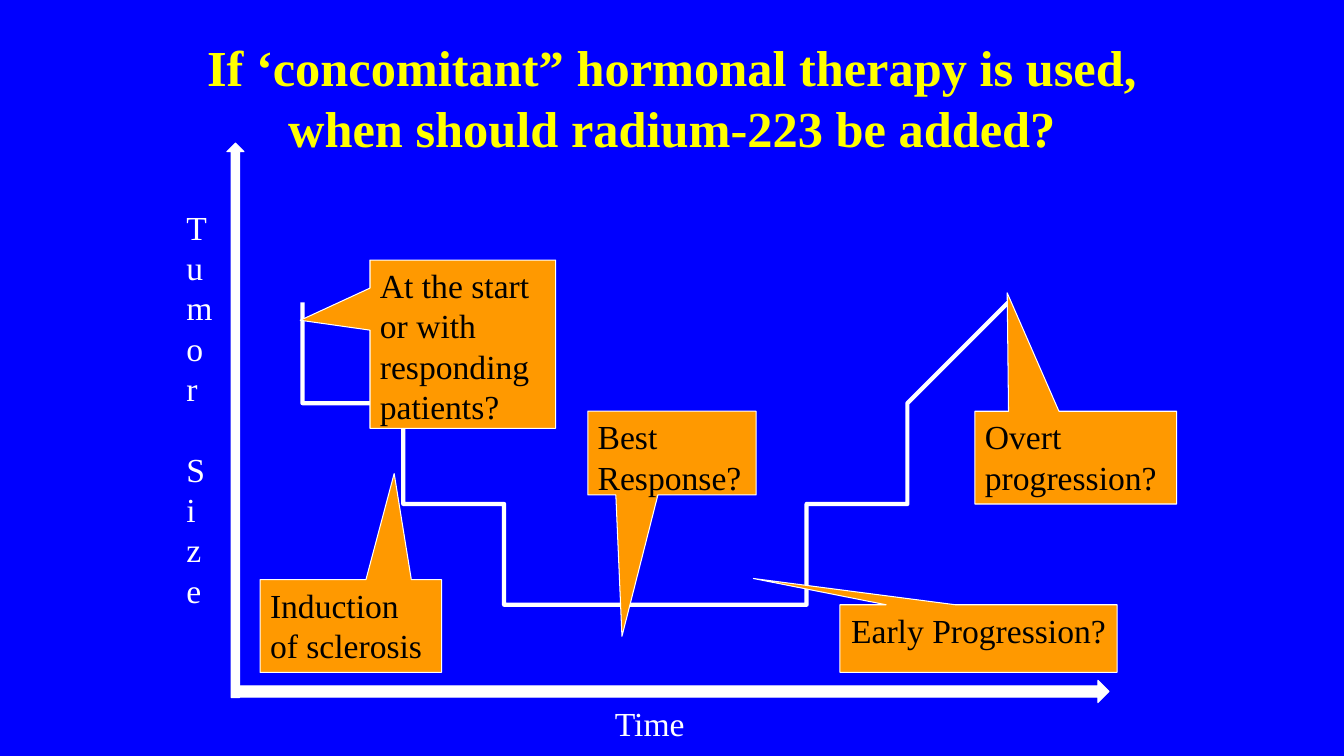
from pptx import Presentation
from pptx.dml.color import RGBColor
from pptx.enum.shapes import MSO_SHAPE as SHAPE
from pptx.enum.text import MSO_ANCHOR as ANCHOR, MSO_AUTO_SIZE as AUTO_SIZE, PP_ALIGN as ALIGN
from pptx.util import Inches, Pt

COLORS = {"background": "0000FF", "title": "FFFF00", "callout": "FF9900",
          "white": "FFFFFF", "black": "000000"}


def color(name):
    return RGBColor.from_string(COLORS[name])


def write(shape, text, size=24, ink="white", bold=False, align=ALIGN.LEFT,
          anchor=ANCHOR.TOP, gap=0):
    """Fill a shape with text, one paragraph per line, gap points apart."""
    frame = shape.text_frame
    frame.word_wrap = True
    frame.auto_size = AUTO_SIZE.NONE
    frame.vertical_anchor = anchor
    frame.text = text
    for index, paragraph in enumerate(frame.paragraphs):
        paragraph.alignment = align
        paragraph.space_before = Pt(gap if index else 0)
        font = paragraph.runs[0].font
        font.name, font.size, font.bold = "Times New Roman", Pt(size), bold
        font.color.rgb = color(ink)


prs = Presentation()
prs.slide_width, prs.slide_height = Inches(13.33), Inches(7.5)
slide = prs.slides.add_slide(prs.slide_layouts[5])
slide.background.fill.solid()
slide.background.fill.fore_color.rgb = color("background")
shapes = slide.shapes

# Title
title = shapes.title
title.left, title.top = Inches(1.75), Inches(0.17)
title.width, title.height = Inches(9.83), Inches(1.58)
write(title, "If ‘concomitant” hormonal therapy is used, when should radium-223 be added?",
      size=36, ink="title", bold=True, align=ALIGN.CENTER, anchor=ANCHOR.MIDDLE)

# Tumor size curve: cubic segments, each starting where the last one ended
start = (2.74, 2.83)
segments = [
    [(3.87, 4.57), (4.99, 6.3), (6.2, 6.3)],
    [(7.41, 6.3), (10.01, 2.84), (10.01, 2.84)],
    [(10.04, 2.82), (10.35, 3.31), (10.22, 2.68)],
]
STEPS = 40
curve_points = []
segment_start = start
for control_1, control_2, end in segments:
    for step in range(1, STEPS + 1):
        t = step / STEPS
        weights = [(1 - t) ** 3, 3 * t * (1 - t) ** 2, 3 * t ** 2 * (1 - t), t ** 3]
        knots = [segment_start, control_1, control_2, end]
        curve_points.append(tuple(
            sum(weight * knot[axis] for weight, knot in zip(weights, knots))
            for axis in (0, 1)))
    segment_start = end
builder = shapes.build_freeform(*start, scale=Inches(1))
builder.add_line_segments(curve_points, close=False)
curve = builder.convert_to_shape()
curve.shadow.inherit = False
curve.fill.background()
curve.line.color.rgb = color("white")
curve.line.width = Pt(3)

# Callouts and axis arrows: kind, box, adjustments, fill, text, alignment
CALLOUT = SHAPE.RECTANGULAR_CALLOUT
parts = [
    (CALLOUT, (9.67, 4.08, 2, 0.92), (-0.34, -1.777), "callout",
     "Overt progression?", ALIGN.LEFT),
    (CALLOUT, (5.83, 4.08, 1.67, 0.83), (-0.297, 2.191), "callout",
     "Best Response?", ALIGN.LEFT),
    (CALLOUT, (8.33, 6, 2.75, 0.67), (-0.812, -0.889), "callout",
     "Early Progression?", ALIGN.CENTER),
    (CALLOUT, (3.67, 2.58, 1.84, 1.67), (-0.876, -0.142), "callout",
     "At the start or with responding patients?", ALIGN.LEFT),
    (SHAPE.RIGHT_ARROW, (2.33, 6.75, 8.67, 0.22), (0.5, 0.5), "white", "", None),
    (SHAPE.UP_ARROW, (2.25, 1.42, 0.17, 5.5), (0.5, 0.5), "white", "", None),
    (CALLOUT, (2.58, 5.75, 1.8, 0.92), (0.239, -1.644), "callout",
     "Induction of sclerosis", ALIGN.LEFT),
]
for kind, box, adjustments, fill, text, align in parts:
    part = shapes.add_shape(kind, *map(Inches, box))
    part.shadow.inherit = False
    for index, value in enumerate(adjustments):
        part.adjustments[index] = value
    part.fill.solid()
    part.fill.fore_color.rgb = color(fill)
    part.line.color.rgb = color("white")
    part.line.width = Pt(0.75)
    if text:
        write(part, text, ink="black", align=align)

# Axis labels: the narrow box stacks the letters of the vertical one
for text, box in [("Time", (6, 6.92, 1.75, 0.51)),
                  ("Tumor\nSize", (1.75, 2, 0.33, 4.14))]:
    write(shapes.add_textbox(*map(Inches, box)), text, gap=28.8)

prs.save("out.pptx")
